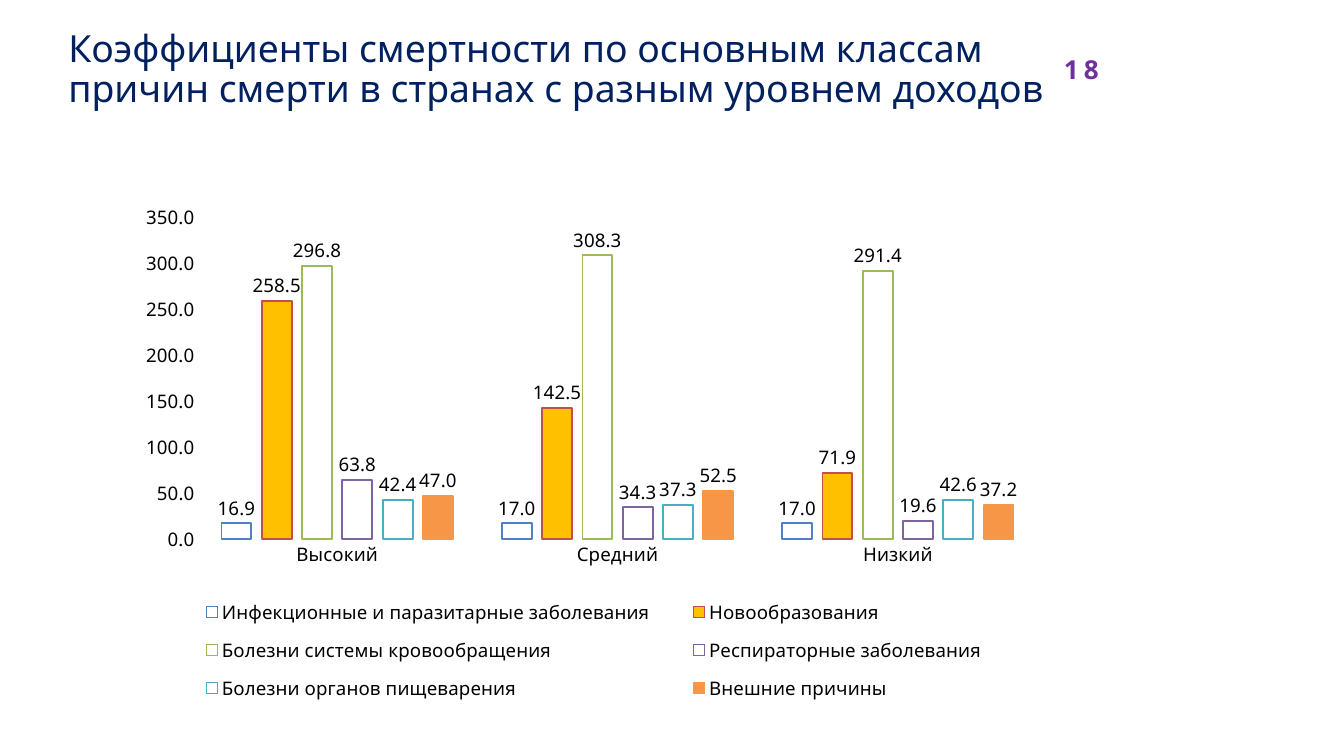
from lxml import etree
from pptx import Presentation
from pptx import util as u
from pptx.chart.data import CategoryChartData
from pptx.dml.color import RGBColor
from pptx.enum import chart as charts, text
from pptx.oxml import ns

COLORS = {
    "title": "002060", "number": "7030A0", "text": "000000",
    "blue": "4F81BD", "gold": "FFC000", "red": "C0504D", "green": "9BBB59",
    "purple": "8064A2", "teal": "4BACC6", "orange": "F79646",
}
INCOME_LEVELS = ["Высокий", "Средний", "Низкий"]
CAUSES = [
    ("Инфекционные и паразитарные заболевания", (16.9, 17.0, 17.0), None, "blue"),
    ("Новообразования", (258.5, 142.5, 71.9), "gold", "red"),
    ("Болезни системы кровообращения", (296.8, 308.3, 291.4), None, "green"),
    ("Респираторные заболевания", (63.8, 34.3, 19.6), None, "purple"),
    ("Болезни органов пищеварения", (42.4, 37.3, 42.6), None, "teal"),
    ("Внешние причины", (47.0, 52.5, 37.2), "orange", "orange"),
]


class SlideBuilder:
    """Holds the style and the current slide."""

    font_name = "Noto Sans"

    def __init__(self, presentation):
        self.slide = presentation.slides.add_slide(presentation.slide_layouts[5])

    def color(self, name):
        return RGBColor.from_string(COLORS[name])

    def style(self, font, size, color, bold=False):
        font.name = self.font_name
        font.size = u.Pt(size)
        font.bold = bold
        font.color.rgb = self.color(color)

    def title(self, wording, left, top, width, height):
        shape = self.slide.shapes.title
        shape.left, shape.top = u.Pt(left), u.Pt(top)
        shape.width, shape.height = u.Pt(width), u.Pt(height)
        frame = shape.text_frame
        frame.text = wording
        frame.word_wrap = True
        frame.auto_size = text.MSO_AUTO_SIZE.NONE
        frame.vertical_anchor = text.MSO_ANCHOR.TOP
        paragraph = frame.paragraphs[0]
        paragraph.alignment = text.PP_ALIGN.LEFT
        paragraph.line_spacing = 0.9
        self.style(paragraph.font, 40, "title")

    def page_number(self, wording, left, top, width, height):
        box = self.slide.shapes.add_textbox(u.Pt(left), u.Pt(top), u.Pt(width), u.Pt(height))
        frame = box.text_frame
        frame.text = wording
        frame.word_wrap = True
        frame.margin_left = frame.margin_right = frame.margin_bottom = 0
        frame.margin_top = u.Pt(1)
        paragraph = frame.paragraphs[0]
        self.style(paragraph.font, 28, "number", bold=True)
        paragraph._p.get_or_add_pPr().get_or_add_defRPr().set("spc", "530")

    def place(self, layout, target, left, top, width, height):
        for child in list(layout):
            layout.remove(child)
        manual = etree.SubElement(layout, ns.qn("c:manualLayout"))
        settings = [("xMode", "edge"), ("yMode", "edge"),
                    ("x", left), ("y", top), ("w", width), ("h", height)]
        if target:
            settings.insert(0, ("layoutTarget", target))
        for tag, value in settings:
            etree.SubElement(manual, ns.qn(f"c:{tag}")).set("val", str(value))

    def axis(self, axis):
        axis.has_major_gridlines = False
        axis.major_tick_mark = axis.minor_tick_mark = charts.XL_TICK_MARK.NONE
        axis.format.line.fill.background()

    def series(self, series, fill, line):
        if fill:
            series.format.fill.solid()
            series.format.fill.fore_color.rgb = self.color(fill)
        else:
            series.format.fill.background()
        series.format.line.color.rgb = self.color(line)
        series.format.line.width = u.Pt(2)
        series.invert_if_negative = False
        labels = series.data_labels
        labels.show_value = True
        labels.position = charts.XL_LABEL_POSITION.OUTSIDE_END
        labels.number_format = "0.0"
        labels.number_format_is_linked = False
        self.style(labels.font, 20, "text")

    def column_chart(self, categories, rows, left, top, width, height):
        data = CategoryChartData(number_format="0.0")
        data.categories = categories
        for name, values, _, _ in rows:
            data.add_series(name, values)
        chart = self.slide.shapes.add_chart(
            charts.XL_CHART_TYPE.COLUMN_CLUSTERED,
            u.Pt(left), u.Pt(top), u.Pt(width), u.Pt(height), data).chart
        self.style(chart.font, 20, "text")
        chart.has_title = False
        self.axis(chart.category_axis)
        self.axis(chart.value_axis)
        chart.value_axis.minimum_scale = 0
        chart.value_axis.maximum_scale = 350
        chart.value_axis.major_unit = 50
        chart.value_axis.tick_labels.number_format = "0.0"
        chart.value_axis.tick_labels.number_format_is_linked = False
        plot = chart.plots[0]
        plot.gap_width = 164
        plot.overlap = -35
        plot.vary_by_categories = False
        for series, (_, _, fill, line) in zip(plot.series, rows):
            self.series(series, fill, line)
        chart.has_legend = True
        chart.legend.position = charts.XL_LEGEND_POSITION.BOTTOM
        chart.legend.include_in_layout = False
        self.style(chart.legend.font, 20, "text")
        area = chart._chartSpace.chart.plotArea
        layout = area.find(ns.qn("c:layout"))
        if layout is None:
            layout = etree.Element(ns.qn("c:layout"))
            area.insert(0, layout)
        self.place(layout, "inner", 0.09, 0.1, 0.89, 0.565)
        legend = chart.legend._element
        layout = legend.find(ns.qn("c:layout"))
        if layout is None:
            layout = etree.Element(ns.qn("c:layout"))
            legend.find(ns.qn("c:legendPos")).addnext(layout)
        self.place(layout, None, 0.06, 0.75, 0.9, 0.22)


def main():
    presentation = Presentation()
    presentation.slide_width = u.Pt(1440)
    presentation.slide_height = u.Pt(810)
    builder = SlideBuilder(presentation)
    builder.column_chart(INCOME_LEVELS, CAUSES, 120, 171.5, 1012.5, 610.5)
    builder.title("Коэффициенты смертности по основным классам причин смерти "
                  "в странах с разным уровнем доходов", 66, 29, 1074, 124.5)
    builder.page_number("18", 1140, 56, 64, 35)
    presentation.save("out.pptx")


if __name__ == "__main__":
    main()
